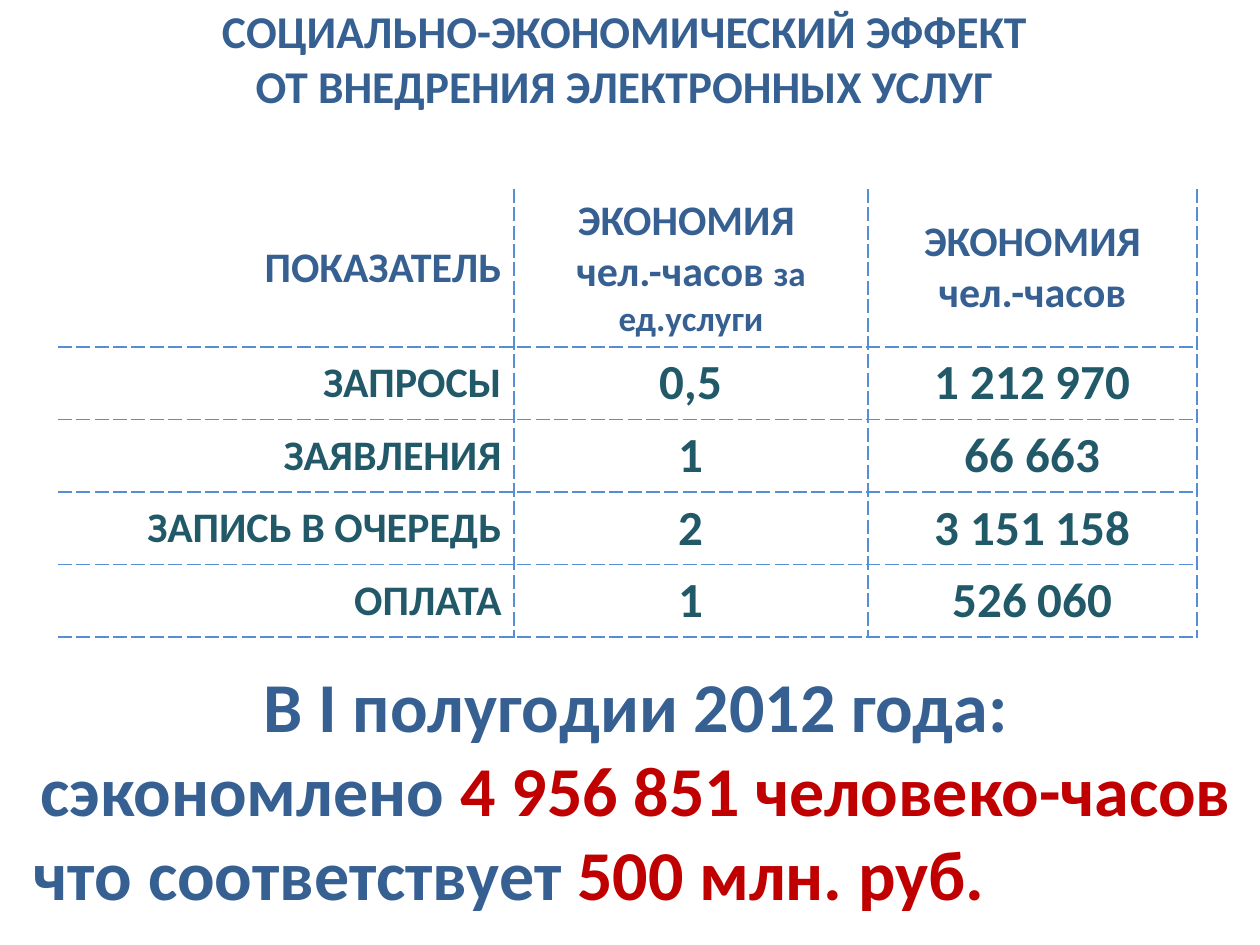
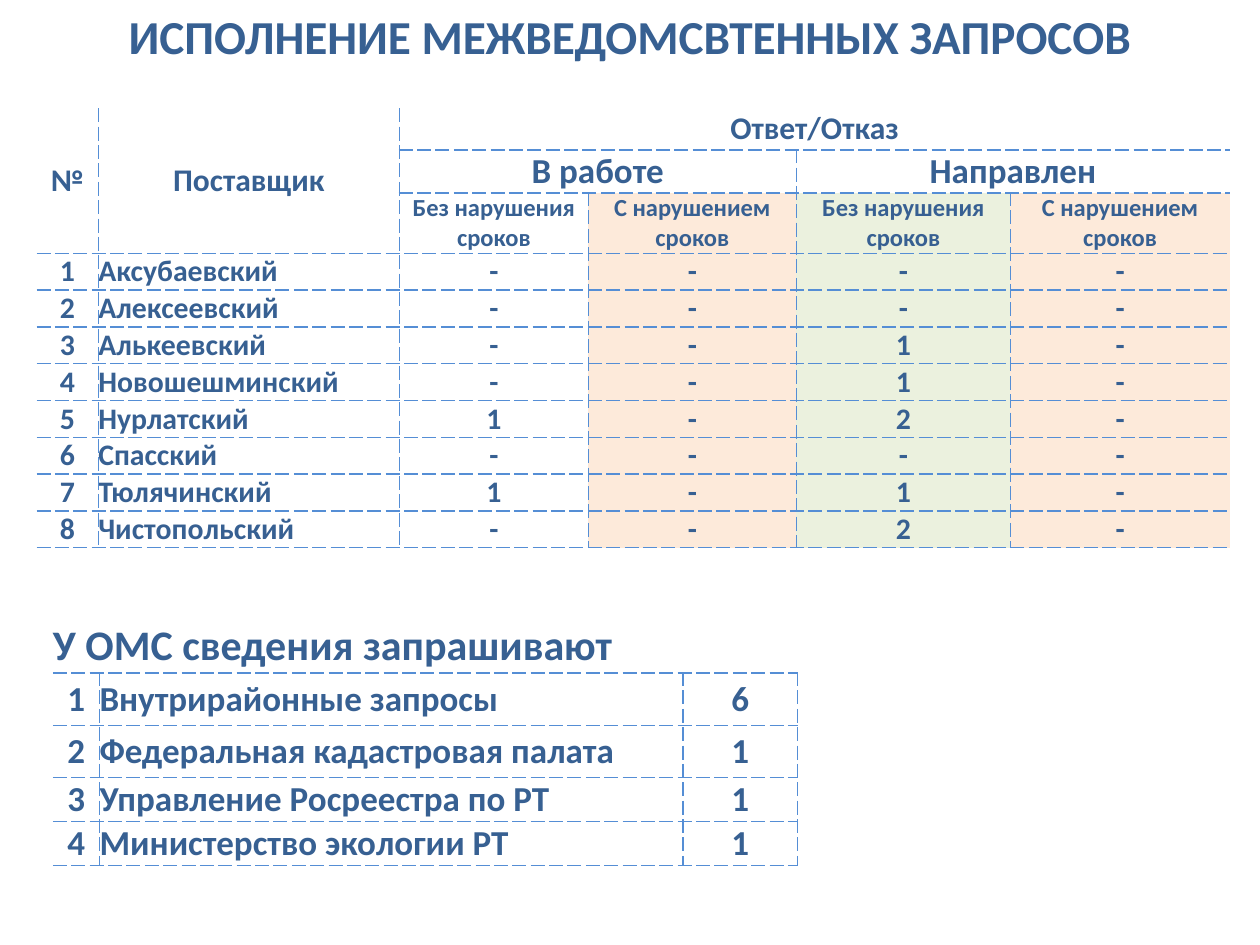
from lxml import etree
from pptx import Presentation
from pptx.dml.color import RGBColor
from pptx.enum.text import MSO_ANCHOR, MSO_AUTO_SIZE, PP_ALIGN
from pptx.oxml.ns import qn
from pptx.util import Inches, Pt

LEFT, CENTER, RIGHT = PP_ALIGN.LEFT, PP_ALIGN.CENTER, PP_ALIGN.RIGHT
TOP, MIDDLE = MSO_ANCHOR.TOP, MSO_ANCHOR.MIDDLE
NO_AUTOFIT = MSO_AUTO_SIZE.NONE

FONT = "Calibri"
COLORS = {
    "blue": "376092",
    "teal": "215968",
    "red": "C00000",
    "border": "558ED5",
    "late": "FDEADA",
    "on_time": "EBF1DE",
}
PLAIN_TABLE_STYLE = "{2D5ABB26-0587-4C30-8999-92F81FD0307C}"
TITLE_ONLY_LAYOUT = 5


def write(paragraph, text, size, color="blue", align=None):
    """Append bold text to a paragraph; a newline becomes a line break."""
    if align is not None:
        paragraph.alignment = align
    for number, line in enumerate(text.split("\n")):
        if number:
            paragraph.add_line_break()
        run = paragraph.add_run()
        run.text = line
        run.font.name = FONT
        run.font.size = Pt(size)
        run.font.bold = True
        run.font.color.rgb = RGBColor.from_string(COLORS[color])


def place_title(slide, text, size, box):
    title = slide.shapes.title
    title.left, title.top, title.width, title.height = map(Inches, box)
    frame = title.text_frame
    frame.auto_size = NO_AUTOFIT
    frame.word_wrap = True
    frame.vertical_anchor = MIDDLE
    write(frame.paragraphs[0], text, size, align=CENTER)


def add_plain_table(slide, left, top, widths, heights):
    frame = slide.shapes.add_table(
        len(heights), len(widths), Inches(left), Inches(top),
        Inches(sum(widths)), Inches(sum(heights)))
    table = frame.table
    table.first_row = table.horz_banding = False
    table._tbl.tblPr.find(qn("a:tableStyleId")).text = PLAIN_TABLE_STYLE
    for column, width in zip(table.columns, widths):
        column.width = Inches(width)
    for row, height in zip(table.rows, heights):
        row.height = Inches(height)
    return table


def fill_cell(cell, text, size, color="blue", align=CENTER, margin=None):
    cell.vertical_anchor = MIDDLE
    if margin is not None:
        cell.margin_left = cell.margin_right = Inches(margin)
        cell.margin_top = cell.margin_bottom = Inches(margin)
    write(cell.text_frame.paragraphs[0], text, size, color, align)


def shade(cell, color):
    if color:
        cell.fill.solid()
        cell.fill.fore_color.rgb = RGBColor.from_string(COLORS[color])
    else:
        cell.fill.background()


def draw_edges(cell, edges):
    """Put dashed lines on the named edges, given in L, R, T, B order."""
    properties = cell._tc.get_or_add_tcPr()
    for position, edge in enumerate(edges):
        line = etree.Element(qn(f"a:ln{edge}"), w=str(Pt(1)))
        fill = etree.SubElement(line, qn("a:solidFill"))
        etree.SubElement(fill, qn("a:srgbClr"), val=COLORS["border"])
        etree.SubElement(line, qn("a:prstDash"), val="sysDash")
        properties.insert(position, line)


def finish_grid(table, shades=None, shade_from=0, right_edge_from=None):
    """Shade columns and rule the grid, open at the left and the top.

    The right side is ruled from row right_edge_from down, if that is given.
    """
    shades = shades or {}
    last_column = len(table.columns) - 1
    for r in range(len(table.rows)):
        for c in range(last_column + 1):
            cell = table.cell(r, c)
            shade(cell, shades.get(c) if r >= shade_from else None)
            if cell.is_spanned:
                continue
            end = c + (cell.span_width if cell.is_merge_origin else 1) - 1
            closed = right_edge_from is not None and r >= right_edge_from
            edges = "L" if c else ""
            edges += "R" if end < last_column or closed else ""
            edges += "T" if r else ""
            draw_edges(cell, edges + "B")


def add_savings_table(slide, left, top):
    savings = [
        ("ЗАПРОСЫ", "0,5", "1 212 970"),
        ("ЗАЯВЛЕНИЯ", "1", "66 663"),
        ("ЗАПИСЬ В ОЧЕРЕДЬ", "2", "3 151 158"),
        ("ОПЛАТА", "1", "526 060"),
    ]
    table = add_plain_table(slide, left, top, [3.62, 2.81, 2.61],
                            [1.25] + [0.57] * len(savings))
    fill_cell(table.cell(0, 0), "ПОКАЗАТЕЛЬ", 24, align=RIGHT)
    per_service = table.cell(0, 1)
    fill_cell(per_service, "ЭКОНОМИЯ \nчел.-часов ", 24)
    write(per_service.text_frame.paragraphs[0], "за ед.услуги", 20)
    total = table.cell(0, 2)
    fill_cell(total, "ЭКОНОМИЯ", 24)
    write(total.text_frame.add_paragraph(), "чел.-часов", 24, align=CENTER)
    for r, (indicator, *hours) in enumerate(savings, 1):
        fill_cell(table.cell(r, 0), indicator, 24, "teal", RIGHT)
        for c, value in enumerate(hours, 1):
            fill_cell(table.cell(r, c), value, 28, "teal")
    finish_grid(table, right_edge_from=0)


def add_savings_summary(slide, box):
    frame = slide.shapes.add_textbox(*map(Inches, box)).text_frame
    frame.word_wrap = True
    frame.vertical_anchor = TOP
    saved = frame.paragraphs[0]
    write(saved, "В I полугодии 2012 года:\nсэкономлено ", 40, align=CENTER)
    write(saved, "4 956 851 человеко-часов", 40, "red")
    worth = frame.add_paragraph()
    write(worth, "что соответствует ", 40, align=LEFT)
    write(worth, "500 млн. руб.", 40, "red")


def add_requests_table(slide, left, top):
    suppliers = [
        ("Аксубаевский", "----"),
        ("Алексеевский", "----"),
        ("Алькеевский", "--1-"),
        ("Новошешминский", "--1-"),
        ("Нурлатский", "1-2-"),
        ("Спасский", "----"),
        ("Тюлячинский", "1-1-"),
        ("Чистопольский", "--2-"),
    ]
    # Each header cell: row, column, last row, last column, text, size
    headers = [
        (0, 0, 2, 0, "№", 18),
        (0, 1, 2, 1, "Поставщик", 18),
        (0, 2, 0, 5, "Ответ/Отказ", 18),
        (1, 2, 1, 3, "В работе", 20),
        (1, 4, 1, 5, "Направлен", 20),
    ]
    deadlines = ["Без нарушения сроков", "С нарушением сроков"] * 2
    table = add_plain_table(
        slide, left, top, [0.49, 2.39, 1.5, 1.65, 1.7, 1.74],
        [0.33, 0.34, 0.48] + [2.34 / len(suppliers)] * len(suppliers))
    for row, column, last_row, last_column, text, size in headers:
        cell = table.cell(row, column)
        cell.merge(table.cell(last_row, last_column))
        fill_cell(cell, text, size, margin=0)
    for c, deadline in enumerate(deadlines, 2):
        fill_cell(table.cell(2, c), deadline, 14, margin=0)
    for number, (supplier, counts) in enumerate(suppliers, 1):
        r = number + 2
        fill_cell(table.cell(r, 0), str(number), 17, margin=0)
        fill_cell(table.cell(r, 1), supplier, 17, align=LEFT, margin=0)
        for c, count in enumerate(counts, 2):
            fill_cell(table.cell(r, c), count, 17, margin=0)
    finish_grid(table, {3: "late", 4: "on_time", 5: "late"}, shade_from=2)


def add_requesters_table(slide, left, top):
    requesters = [
        ("Внутрирайонные запросы", 6),
        ("Федеральная кадастровая палата", 1),
        ("Управление Росреестра по РТ", 1),
        ("Министерство экологии РТ", 1),
    ]
    table = add_plain_table(slide, left, top, [0.37, 4.63, 0.91],
                            [0.42, 0.42, 0.41, 0.35, 0.35])
    heading = table.cell(0, 0)
    heading.merge(table.cell(0, 2))
    fill_cell(heading, "У ОМС сведения запрашивают", 24, align=LEFT, margin=0)
    for r, (requester, count) in enumerate(requesters, 1):
        fill_cell(table.cell(r, 0), str(r), 20, margin=0)
        fill_cell(table.cell(r, 1), requester, 20, align=LEFT, margin=0)
        fill_cell(table.cell(r, 2), str(count), 20, margin=0)
    finish_grid(table, right_edge_from=1)


def build_savings_slide(slide):
    place_title(slide, "СОЦИАЛЬНО-ЭКОНОМИЧЕСКИЙ ЭФФЕКТ \n"
                "ОТ ВНЕДРЕНИЯ ЭЛЕКТРОННЫХ УСЛУГ ", 26, (0, -0.03, 10, 0.98))
    add_savings_table(slide, 0.46, 1.5)
    add_savings_summary(slide, (0.17, 5.21, 9.75, 2.12))


def build_requests_slide(slide):
    place_title(slide, "ИСПОЛНЕНИЕ МЕЖВЕДОМСВТЕННЫХ ЗАПРОСОВ", 27,
                (0, 0, 10, 0.56))
    add_requests_table(slide, 0.29, 0.86)
    add_requesters_table(slide, 0.42, 4.92)


def main():
    presentation = Presentation()
    presentation.slide_width = Inches(10)
    presentation.slide_height = Inches(7.5)
    layout = presentation.slide_layouts[TITLE_ONLY_LAYOUT]
    for build in (build_savings_slide, build_requests_slide):
        build(presentation.slides.add_slide(layout))
    presentation.save("out.pptx")


if __name__ == "__main__":
    main()
